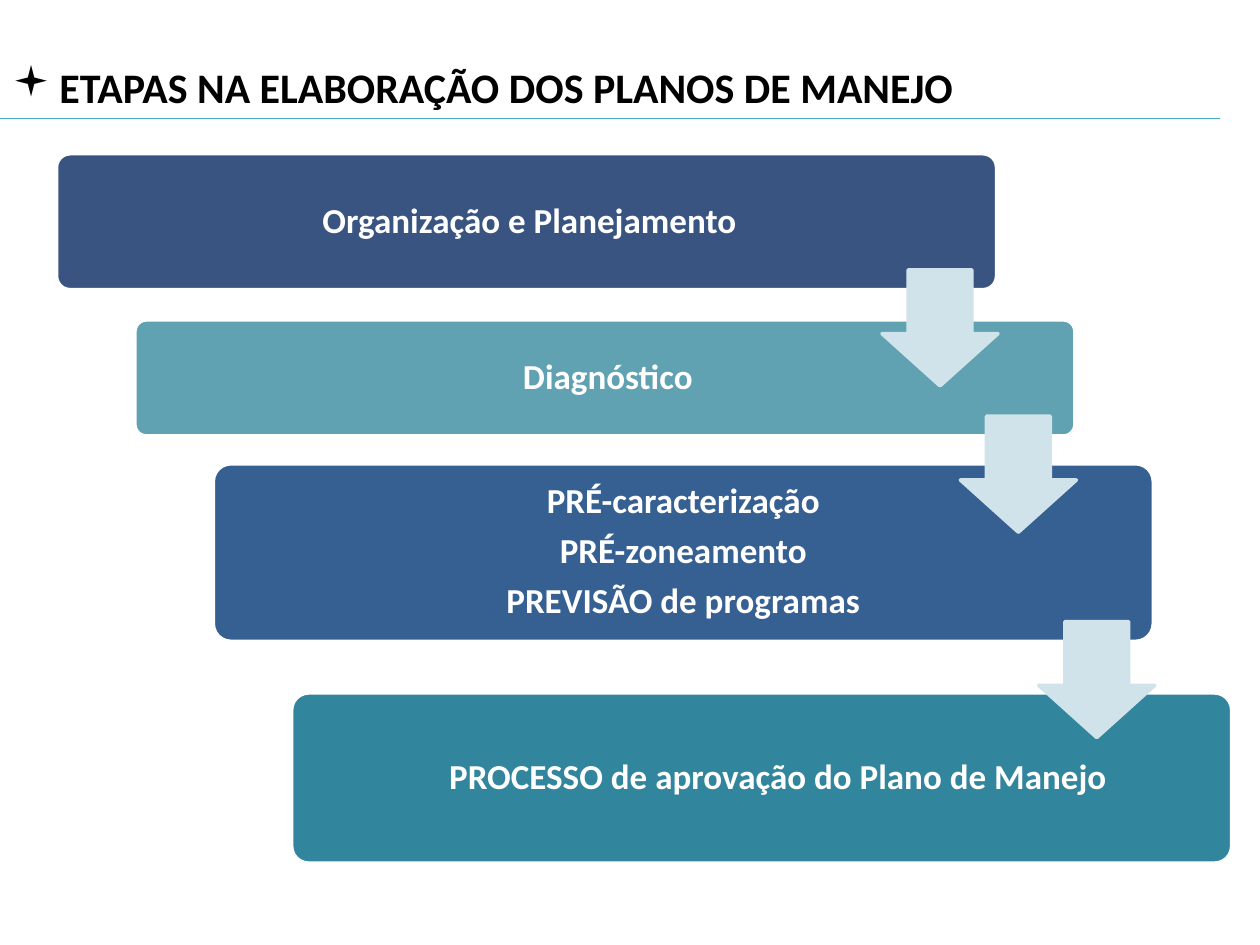
"""Build a slide with the four steps of a management plan as a staircase."""
from lxml import etree
from pptx import Presentation
from pptx import util as u
from pptx.dml.color import RGBColor
from pptx.enum import shapes, text
from pptx.oxml import ns

TITLE = "ETAPAS NA ELABORAÇÃO DOS PLANOS DE MANEJO"
STEPS = [
    dict(lines=["Organização e Planejamento"], top=3.1, high=2.74,
         fill="254275", alpha=90, shift=0.06),
    dict(lines=["Diagnóstico"], top=6.45, high=2.34,
         fill="31859C", alpha=77, shift=0.06),
    dict(lines=["PRÉ-caracterização", "PRÉ-zoneamento", "PREVISÃO de programas"],
         top=9.35, high=3.58, fill="376092", alpha=100, shift=0),
    dict(lines=["PROCESSO de aprovação do Plano de Manejo"], top=13.97, high=3.43,
         fill="31859C", alpha=100, shift=0.33),
]
THEME = dict(font="Calibri", head=24, body=20, dark="000000", light="FFFFFF",
             rule="4BACC6", arrow="D0E3EA")
LEFT, STRIDE, WIDE = 1.14, 1.58, 18.95
INSET, ARROW, AHEAD, LAP = 0.18, 2.34, 16.64, 0.4


def tint(hue):
    return RGBColor.from_string(hue)


def node(base, tag, **attrs):
    return etree.SubElement(base, ns.qn(tag), attrs)


def style(para, size, hue):
    for run in para.runs:
        font = run.font
        font.name, font.size, font.bold = THEME["font"], u.Pt(size), True
        font.color.rgb = tint(hue)


def draw(slide, kind, box, fill, line, ratios):
    item = slide.shapes.add_shape(kind, *map(u.Cm, box))
    item.shadow.inherit = False
    item.fill.solid()
    item.fill.fore_color.rgb = tint(fill)
    item.line.color.rgb = tint(line)
    item.line.width = u.Pt(2)
    for i, ratio in enumerate(ratios):
        item.adjustments[i] = ratio
    return item


def add_head(slide):
    box = slide.shapes.add_textbox(0, u.Cm(1.12), u.Cm(25.4), u.Cm(1.27))
    frame = box.text_frame
    frame.word_wrap = True
    frame.auto_size = text.MSO_AUTO_SIZE.SHAPE_TO_FIT_TEXT
    frame.text = TITLE
    para = frame.paragraphs[0]
    style(para, THEME["head"], THEME["dark"])
    props = para._p.get_or_add_pPr()
    props.set("marL", str(u.Cm(0.95)))
    props.set("indent", str(u.Cm(-0.95)))
    node(props, "a:buFont", typeface="Wingdings")
    node(props, "a:buChar", char="▪")
    rule = slide.shapes.add_connector(
        shapes.MSO_CONNECTOR.STRAIGHT, 0, u.Cm(2.39), u.Cm(24.6), u.Cm(2.39))
    rule.line.color.rgb = tint(THEME["rule"])
    rule.line.width = u.Pt(0.75)
    node(rule._element.spPr, "a:effectLst")


def add_step(slide, step, left):
    bar = draw(slide, shapes.MSO_SHAPE.ROUNDED_RECTANGLE,
               (left, step["top"], WIDE, step["high"]),
               step["fill"], THEME["light"], [0.1])
    if step["alpha"] < 100:
        hue = bar._element.spPr.find(ns.qn("a:solidFill"))[0]
        node(hue, "a:alpha", val=str(step["alpha"] * 1000))
    frame = bar.text_frame
    frame.word_wrap = True
    frame.vertical_anchor = text.MSO_ANCHOR.MIDDLE
    frame.margin_left = u.Cm(INSET + 2 * step["shift"])
    frame.margin_right = frame.margin_top = frame.margin_bottom = u.Cm(INSET)
    frame.text = "\n".join(step["lines"])
    for para in frame.paragraphs:
        para.alignment = text.PP_ALIGN.CENTER
        para.line_spacing = 0.9
        para.space_after = u.Pt(7)
        style(para, THEME["body"], THEME["light"])


def main():
    deck = Presentation()
    deck.slide_width, deck.slide_height = u.Cm(25.4), u.Cm(19.05)
    slide = deck.slides.add_slide(deck.slide_layouts[6])
    add_head(slide)
    for i, step in enumerate(STEPS):
        add_step(slide, step, LEFT + i * STRIDE)
    for i, step in enumerate(STEPS[:-1]):
        left = LEFT + i * STRIDE + AHEAD
        top = step["top"] + step["high"] - LAP
        draw(slide, shapes.MSO_SHAPE.DOWN_ARROW, (left, top, ARROW, ARROW),
             THEME["arrow"], THEME["arrow"], [0.55, 0.45])
    deck.save("out.pptx")


if __name__ == "__main__":
    main()
